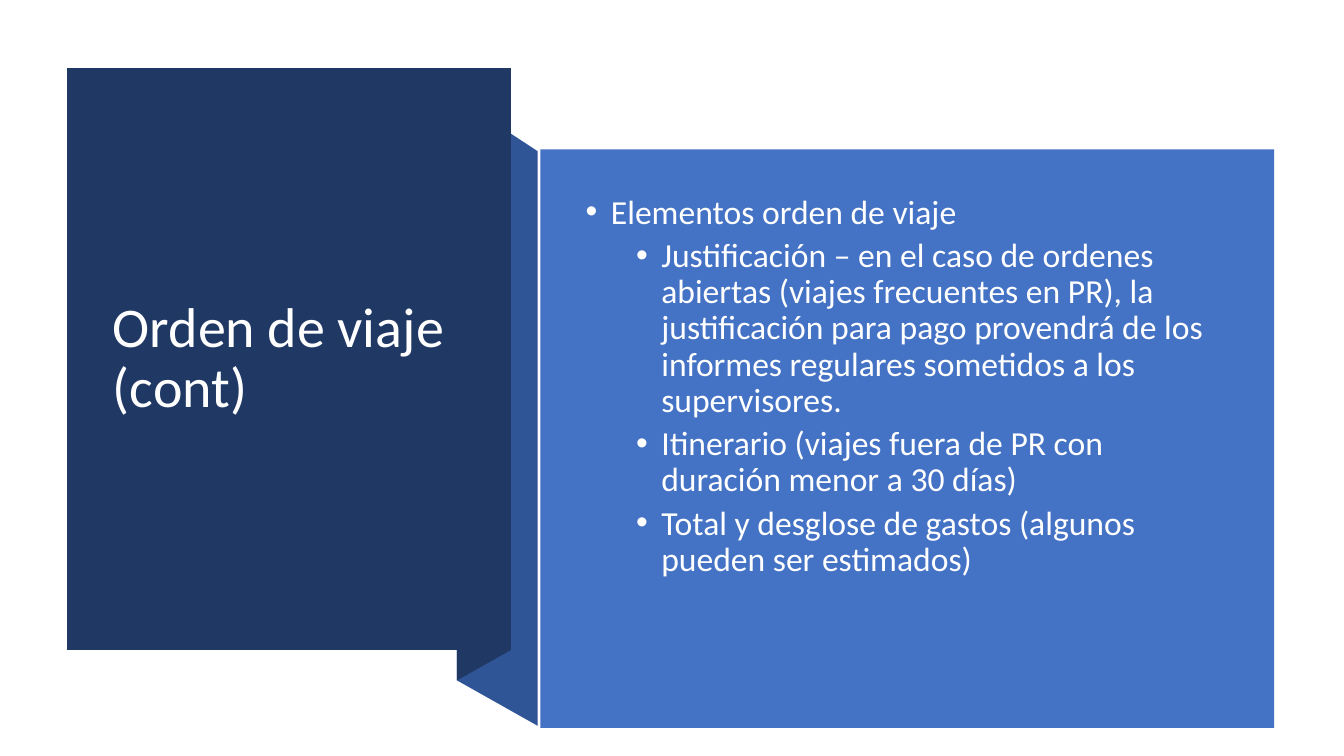
from dataclasses import dataclass

from lxml import etree
from pptx import Presentation
from pptx.dml.color import RGBColor
from pptx.enum.shapes import MSO_SHAPE
from pptx.enum.text import MSO_ANCHOR, MSO_AUTO_SIZE, PP_ALIGN
from pptx.oxml.ns import qn
from pptx.util import Inches, Pt

RECT = MSO_SHAPE.RECTANGLE
TOP, MIDDLE = MSO_ANCHOR.TOP, MSO_ANCHOR.MIDDLE
NO_FIT = MSO_AUTO_SIZE.NONE
LEFT = PP_ALIGN.LEFT

# Slide size, and one percent of it each way
WIDE, HIGH = Inches(13.33), Inches(7.5)
COL, ROW = WIDE / 100, HIGH / 100


@dataclass(frozen=True)
class Theme:
    navy: str = "203864"
    fold: str = "2F5597"
    blue: str = "4472C4"
    white: str = "FFFFFF"
    font: str = "Calibri"
    title: int = 40
    body: int = 24
    lines: float = 0.9


THEME = Theme()

# Text of the list: level and wording
ITEMS = [
    (0, "Elementos orden de viaje"),
    (1, "Justificación – en el caso de ordenes abiertas (viajes frecuentes "
        "en PR), la justificación para pago provendrá de los informes "
        "regulares sometidos a los supervisores."),
    (1, "Itinerario (viajes fuera de PR con duración menor a 30 días)"),
    (1, "Total y desglose de gastos (algunos pueden ser estimados)"),
]

# Edges of the ribbon, in percent of the slide
CARD_L, CARD_R, CARD_T, CARD_B = 5.2, 38, 9.33, 86
BEND, BEND_T, BEND_B = 34, 13.1, 89.7
PANEL_L, PANEL_R, PANEL_T, PANEL_B = 40.2, 94.8, 19.75, 96.3


def paint(shape, color):
    shape.shadow.inherit = False
    shape.fill.solid()
    shape.fill.fore_color.rgb = RGBColor.from_string(color)
    shape.line.fill.background()


def add_face(slide, points, color):
    pen = slide.shapes.build_freeform(*points[0], scale=(COL, ROW))
    pen.add_line_segments(points[1:], close=True)
    paint(pen.convert_to_shape(), color)


def add_panel(slide, left, top, right, bottom, color):
    panel = slide.shapes.add_shape(
        RECT, round(left * COL), round(top * ROW),
        round((right - left) * COL), round((bottom - top) * ROW))
    paint(panel, color)


def place(slide, holder, left, top, width, height, anchor):
    """Bring a placeholder to the front and set its box."""
    slide.shapes._spTree.append(holder._element)
    holder.left, holder.top = round(left * COL), round(top * ROW)
    holder.width, holder.height = round(width * COL), round(height * ROW)
    frame = holder.text_frame
    frame.word_wrap = True
    frame.auto_size = NO_FIT
    frame.vertical_anchor = anchor
    return frame


def style(para, size):
    para.alignment = LEFT
    para.line_spacing = THEME.lines
    for run in para.runs:
        run.font.name = THEME.font
        run.font.size = Pt(size)
        run.font.color.rgb = RGBColor.from_string(THEME.white)


def add_dot(para, level):
    props = para._p.get_or_add_pPr()
    props.set("marL", str(Inches(0.25 + 0.5 * level)))
    props.set("indent", str(-Inches(0.25)))
    etree.SubElement(props, qn("a:buFont")).set("typeface", "Arial")
    etree.SubElement(props, qn("a:buChar")).set("char", "•")


def fill_list(frame, items):
    frame.margin_top = 0
    for i, (level, text) in enumerate(items):
        para = frame.add_paragraph() if i else frame.paragraphs[0]
        para.text = text
        para.level = level
        add_dot(para, level)
        para.space_before = Pt(5 if i else 0)
        style(para, THEME.body)


def main():
    deck = Presentation()
    deck.slide_width, deck.slide_height = WIDE, HIGH
    slide = deck.slides.add_slide(deck.slide_layouts[1])
    title, body = slide.shapes.title, slide.placeholders[1]

    # Folded ribbon and title card
    add_face(slide, [(PANEL_L, PANEL_B), (BEND, BEND_B), (BEND, BEND_T),
                     (PANEL_L, 20)], THEME.fold)
    add_face(slide, [(CARD_R, CARD_B), (BEND, BEND_B), (BEND, BEND_T),
                     (CARD_R, CARD_T)], THEME.navy)
    add_face(slide, [(CARD_L, CARD_T), (CARD_R, CARD_T), (CARD_R, CARD_B),
                     (CARD_L, CARD_B)], THEME.navy)

    # Title
    frame = place(slide, title, 7.65, 14.27, 27.83, 66.53, MIDDLE)
    frame.text = "Orden de viaje (cont)"
    style(frame.paragraphs[0], THEME.title)

    # Panel with the list
    add_panel(slide, PANEL_L, PANEL_T, PANEL_R, PANEL_B, THEME.blue)
    frame = place(slide, body, 42.83, 25.8, 48.84, 62.5, TOP)
    fill_list(frame, ITEMS)

    deck.save("out.pptx")


if __name__ == "__main__":
    main()
